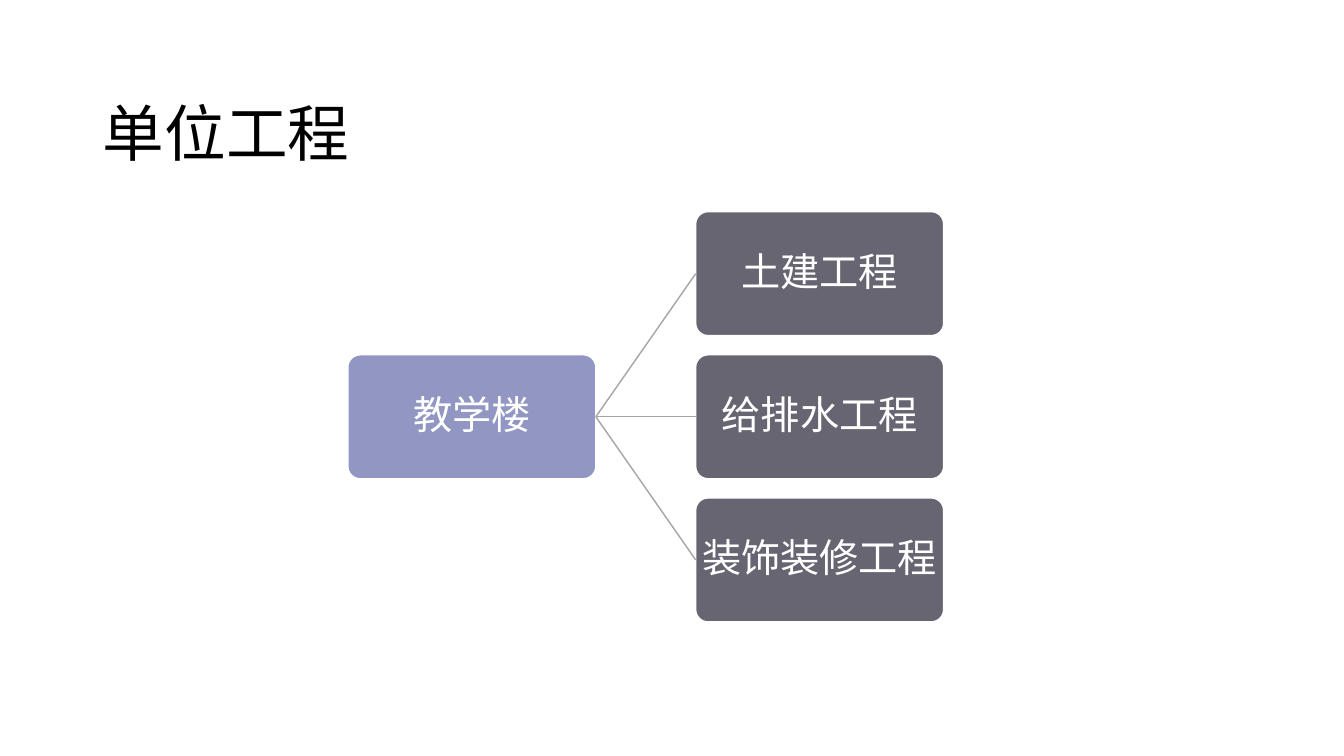
from lxml.etree import SubElement
from pptx import Presentation
from pptx.dml.color import RGBColor
from pptx.enum.shapes import MSO_CONNECTOR, MSO_SHAPE
from pptx.enum.text import MSO_ANCHOR, MSO_AUTO_SIZE, PP_ALIGN
from pptx.oxml.ns import qn
from pptx.util import Inches, Pt

TITLE = "单位工程"
ROOT = "教学楼"
PARTS = ["土建工程", "给排水工程", "装饰装修工程"]

BLACK = RGBColor(0x00, 0x00, 0x00)
WHITE = RGBColor(0xFF, 0xFF, 0xFF)
BLUE = RGBColor(0x91, 0x96, 0xC3)
SLATE = RGBColor(0x68, 0x65, 0x73)
GREY = RGBColor(0xA5, 0xA5, 0xA5)
SANS = "Noto Sans CJK SC"
SERIF = "Times New Roman"

WIDTH, HEIGHT = 2.46, 1.23
LEFT, TOP = 3.45, 2.1
COL_STEP, ROW_STEP = 3.45, 1.42


def write(shape, text, font=SANS, size=28, color=WHITE, align=PP_ALIGN.CENTER, space=0.9):
    frame = shape.text_frame
    frame.word_wrap = True
    frame.auto_size = MSO_AUTO_SIZE.NONE
    frame.vertical_anchor = MSO_ANCHOR.MIDDLE
    para = frame.paragraphs[0]
    para.alignment = align
    para.line_spacing = space
    run = para.add_run()
    run.text = text
    run.font.name = font
    run.font.size = Pt(size)
    run.font.color.rgb = color
    SubElement(run.font._element, qn("a:ea")).set("typeface", SANS)


def add_box(slide, text, col, row, fill):
    box = slide.shapes.add_shape(
        MSO_SHAPE.ROUNDED_RECTANGLE,
        Inches(LEFT + col * COL_STEP), Inches(TOP + row * ROW_STEP),
        Inches(WIDTH), Inches(HEIGHT))
    box.adjustments[0] = 0.1
    box.shadow.inherit = False
    box.fill.solid()
    box.fill.fore_color.rgb = fill
    box.line.color.rgb = WHITE
    box.line.width = Pt(1)
    frame = box.text_frame
    frame.margin_left = frame.margin_right = Inches(0.02)
    frame.margin_top = frame.margin_bottom = Inches(0.02)
    write(box, text)
    return box


def link(slide, start, end):
    line = slide.shapes.add_connector(MSO_CONNECTOR.STRAIGHT, 0, 0, 0, 0)
    line.begin_connect(start, 3)
    line.end_connect(end, 1)
    line.line.color.rgb = GREY
    line.line.width = Pt(1)
    SubElement(line._element.spPr, qn("a:effectLst"))


def main():
    deck = Presentation()
    deck.slide_width, deck.slide_height = Inches(13.33), Inches(7.5)
    slide = deck.slides.add_slide(deck.slide_layouts[5])
    title = slide.shapes.title
    title.left, title.top = Inches(0.92), Inches(0.4)
    title.width, title.height = Inches(11.5), Inches(1.45)
    write(title, TITLE, font=SERIF, size=44, color=BLACK, align=PP_ALIGN.LEFT, space=1.5)

    root = add_box(slide, ROOT, 0, (len(PARTS) - 1) / 2, BLUE)
    for row, name in enumerate(PARTS):
        link(slide, root, add_box(slide, name, 1, row, SLATE))
    deck.save("out.pptx")


if __name__ == "__main__":
    main()
